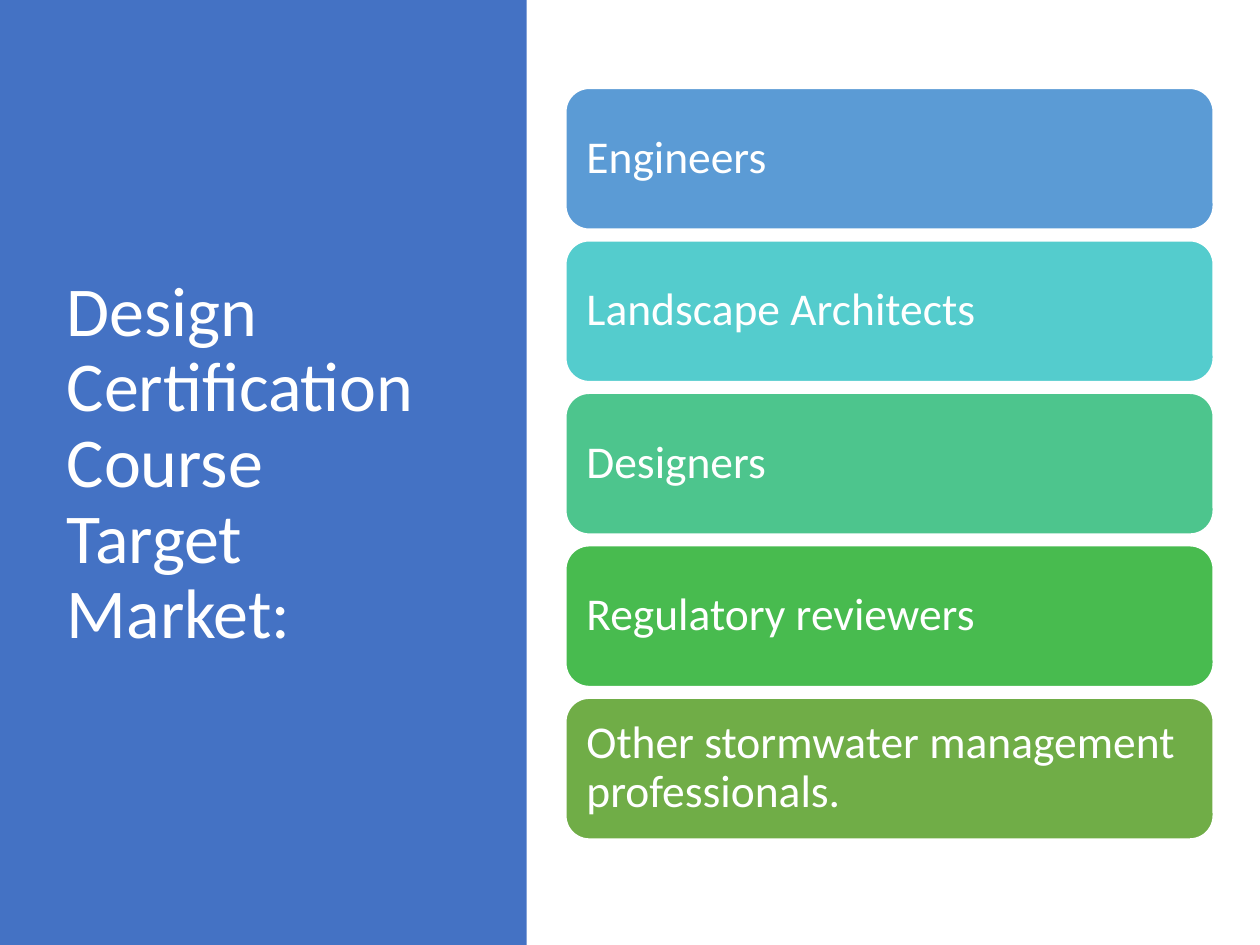
from pptx import Presentation
from pptx.dml.color import RGBColor
from pptx.enum.shapes import MSO_SHAPE as Shape
from pptx.enum.text import MSO_ANCHOR as Anchor, MSO_AUTO_SIZE as AutoSize, PP_ALIGN as Align
from pptx.util import Inches, Pt

WHITE = RGBColor(0xFF, 0xFF, 0xFF)
PANEL_BLUE = RGBColor(0x44, 0x72, 0xC4)
AUDIENCES = [
    ("Engineers", RGBColor(0x5B, 0x9B, 0xD5)),
    ("Landscape Architects", RGBColor(0x54, 0xCC, 0xCD)),
    ("Designers", RGBColor(0x4D, 0xC5, 0x8D)),
    ("Regulatory reviewers", RGBColor(0x48, 0xBB, 0x4F)),
    ("Other stormwater management professionals.", RGBColor(0x70, 0xAD, 0x47)),
]
CARD_LEFT, CARD_TOP, CARD_WIDTH, CARD_HEIGHT = 4.49, 0.7, 5.14, 1.12
CARD_PITCH = 1.21


def write_text(shape, text, size, inset_x, inset_y):
    frame = shape.text_frame
    frame.word_wrap = True
    frame.auto_size = AutoSize.NONE
    frame.vertical_anchor = Anchor.MIDDLE
    frame.margin_left = frame.margin_right = Inches(inset_x)
    frame.margin_top = frame.margin_bottom = Inches(inset_y)
    frame.text = text
    paragraph = frame.paragraphs[0]
    paragraph.alignment = Align.LEFT
    paragraph.line_spacing = 0.9
    paragraph.font.name = "Calibri"
    paragraph.font.size = Pt(size)
    paragraph.font.color.rgb = WHITE


def add_filled_shape(kind, left, top, width, height, color):
    shape = slide.shapes.add_shape(
        kind, Inches(left), Inches(top), Inches(width), Inches(height))
    shape.shadow.inherit = False
    shape.fill.solid()
    shape.fill.fore_color.rgb = color
    return shape


presentation = Presentation()
presentation.slide_width = Inches(10)
presentation.slide_height = Inches(7.5)
slide = presentation.slides.add_slide(presentation.slide_layouts[5])

title = slide.shapes.title
title.left, title.top = Inches(0.43), Inches(0.68)
title.width, title.height = Inches(3.12), Inches(6.02)
write_text(title, "Design Certification Course\vTarget Market:", size=40, inset_x=0.1, inset_y=0.05)

panel = add_filled_shape(Shape.RECTANGLE, 0, 0, 4.18, 7.5, PANEL_BLUE)
panel.line.fill.background()
title.element.addprevious(panel.element)  # the panel lies behind the title

for row, (audience, color) in enumerate(AUDIENCES):
    card = add_filled_shape(Shape.ROUNDED_RECTANGLE, CARD_LEFT, CARD_TOP + row * CARD_PITCH,
                            CARD_WIDTH, CARD_HEIGHT, color)
    card.line.color.rgb = WHITE
    card.line.width = Pt(1)
    write_text(card, audience, size=26, inset_x=0.11, inset_y=0.11)

presentation.save("out.pptx")
